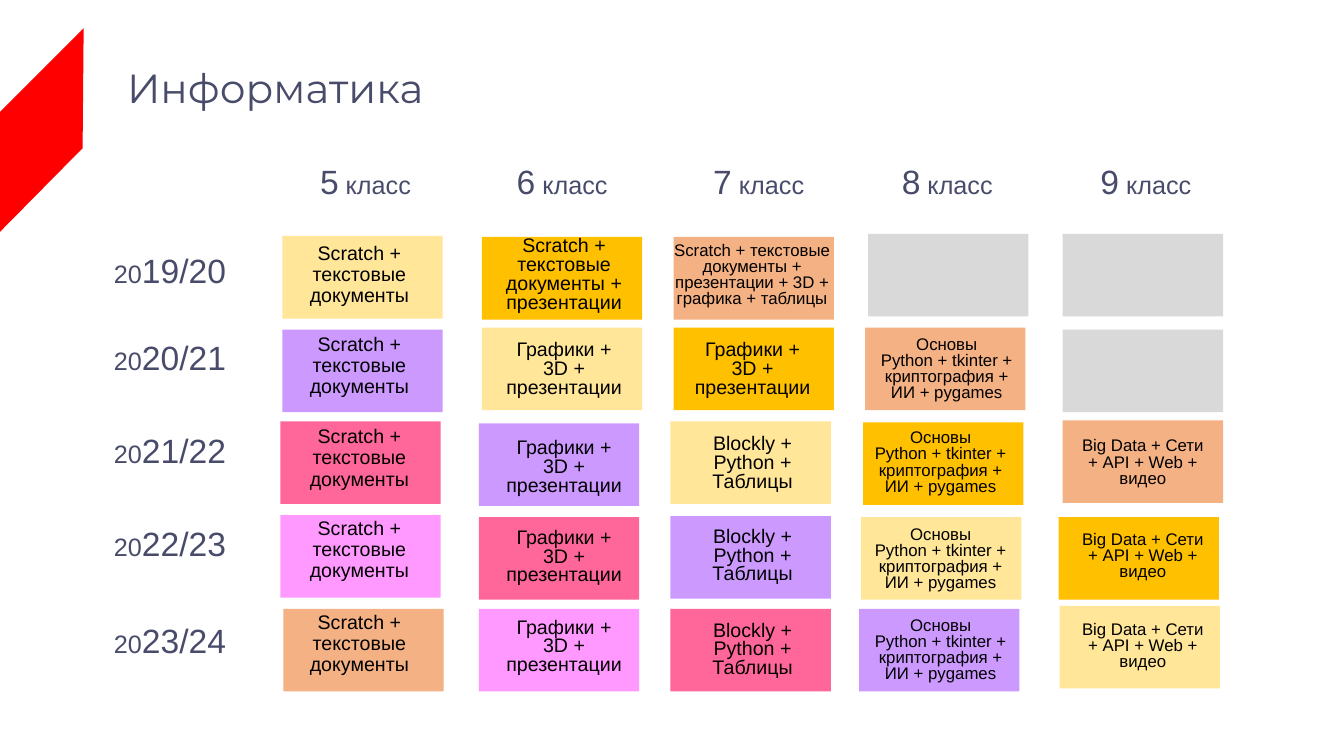
"""Build the slide with the informatics plan by school year and class."""
from pptx import Presentation, util as u
from pptx.dml.color import RGBColor
from pptx.enum import shapes, text

deck = Presentation()
deck.slide_width, deck.slide_height = u.Inches(13.33), u.Inches(7.5)
slide = deck.slides.add_slide(deck.slide_layouts[6])


def paint(fill, tone):
    fill.solid()
    fill.fore_color.rgb = RGBColor.from_string(tone)


def write(place, lines, tone="484C6A", face="Arial", pad=0.02, form=None, para=None):
    frame = slide.shapes.add_textbox(*map(u.Inches, place)).text_frame
    look = {"word_wrap": True, "auto_size": text.MSO_AUTO_SIZE.SHAPE_TO_FIT_TEXT}
    look |= {f"margin_{side}": u.Inches(pad) for side in ("left", "top", "right", "bottom")}
    for key, val in (look | (form or {})).items():
        setattr(frame, key, val)
    for spot, line in enumerate(lines):
        part = frame.add_paragraph() if spot else frame.paragraphs[0]
        for key, val in ({"line_spacing": 0.9} | (para or {})).items():
            setattr(part, key, val)
        for words, size in line:
            run = part.add_run()
            run.text = words
            paint(run.font.fill, tone)
            for key, val in {"name": face, "size": u.Pt(size)}.items():
                setattr(run.font, key, val)


center = {"alignment": text.PP_ALIGN.CENTER}
middle = {"vertical_anchor": text.MSO_ANCHOR.MIDDLE}

pen = slide.shapes.build_freeform(0, u.Inches(1.11), scale=1)
pen.add_line_segments([(u.Inches(x), u.Inches(y))
                       for x, y in ((0.83, 0.28), (0.82, 1.47), (0, 2.3))])
band = pen.convert_to_shape()
band.shadow.inherit = False
paint(band.fill, "FF0000")
band.line.fill.background()

write((1.21, 0.4, 8.81, 1), [[("Информатика", 29)]], face="Montserrat", pad=0.05,
      form=middle | {"auto_size": text.MSO_AUTO_SIZE.NONE})

shades = ["F4B183", "FF99FF", "FF6699", "CC99FF", "FFE699",
          "FFC000", "F4B183", "D9D9D9", "D9D9D9"]
lefts = [(2.8, 2.8, 2.78, 2.78, 2.81),
         (4.78, 4.78, 4.75, 4.75, 4.75),
         (6.68, 6.68, 6.65, 6.65, 6.65),
         (8.61, 8.58, 8.56, 8.54, 8.52),
         (10.54, 10.54, 10.54, 10.5, 10.51)]
tops = [(2.34, 3.27, 4.18, 5.11, 6.04),
        (2.35, 3.25, 4.2, 5.13, 6.04),
        (2.35, 3.25, 4.18, 5.12, 6.04),
        (2.32, 3.25, 4.19, 5.13, 6.04),
        (2.32, 3.27, 4.17, 5.13, 6.01)]
for col in range(5):
    for row in range(5):
        place = lefts[col][row], tops[col][row], 1.59, 0.82
        card = slide.shapes.add_shape(shapes.MSO_SHAPE.RECTANGLE, *map(u.Inches, place))
        card.shadow.inherit = False
        paint(card.fill, shades[col - row + 4])
        card.line.fill.background()

for grade, left in enumerate((2.93, 4.88, 6.83, 8.7, 10.67), 5):
    write((left, 1.62, 1.39, 0.43), [[(str(grade), 24), (" класс", 18)]], para=center)
for year, top in enumerate((2.5, 3.37, 4.29, 5.21, 6.18), 19):
    write((1.11, top, 1.39, 0.43), [[("20", 18), (f"{year}/{year + 1}", 24)]])

start = "Scratch + текстовые документы"
graph = "Графики + 3D + презентации"
basics = "Основы\nPython + tkinter + криптография + ИИ + pygames"
topics = [
    (start, 14, 0.9, 2.93, 1.27, 0.66, (2.4, 3.3, 4.22, 5.13, 6.06)),
    (start + " + презентации", 14, 0.8, 4.96, 1.27, 0.8, (2.33,)),
    (graph, 14, 0.8, 4.96, 1.27, 0.62, (3.36, 4.33, 5.22, 6.11)),
    (graph, 14, 0.8, 6.83, 1.27, 0.62, (3.36,)),
    (start + " + презентации + 3D + графика + таблицы", 12, 0.8, 6.65, 1.62, 0.71, (2.38,)),
    ("Blockly + Python + Таблицы", 14, 0.8, 6.83, 1.27, 0.62, (4.29, 5.21, 6.14)),
    (basics, 12, 0.8, 8.62, 1.54, 0.71, (3.31,)),
    (basics, 12, 0.8, 8.56, 1.54, 0.71, (4.24,)),
    (basics, 12, 0.8, 8.61, 1.44, 0.71, (5.2, 6.1)),
    ("Big Data + Сети + API + Web + видео", 12, 0.8, 10.65, 1.37, 0.55, (4.32, 5.25, 6.14)),
]
for topic, size, gap, left, width, height, spots in topics:
    for top in spots:
        write((left, top, width, height), [[(line, size)] for line in topic.split("\n")],
              tone="000000", form=middle, para=center | {"line_spacing": gap})

deck.save("out.pptx")
